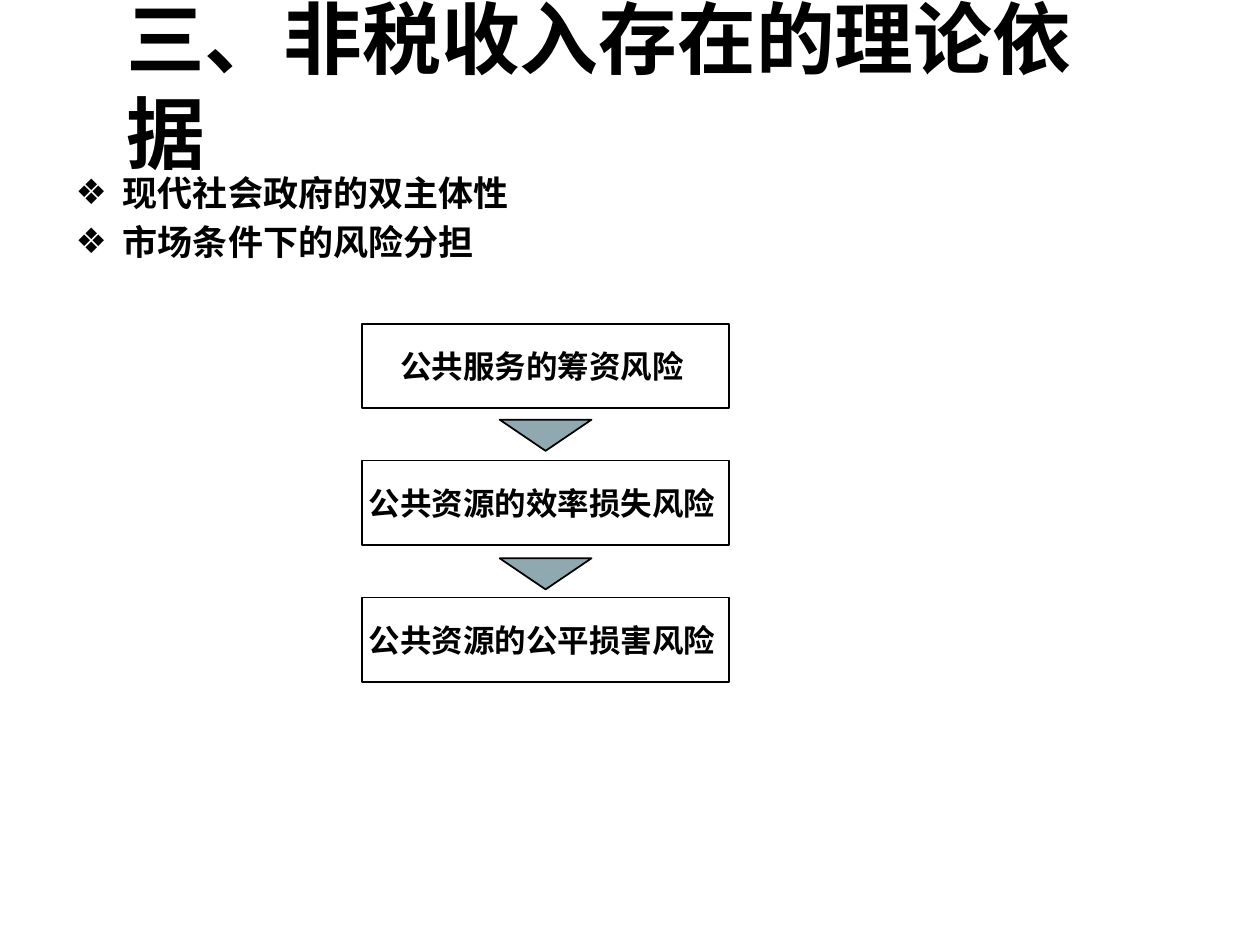
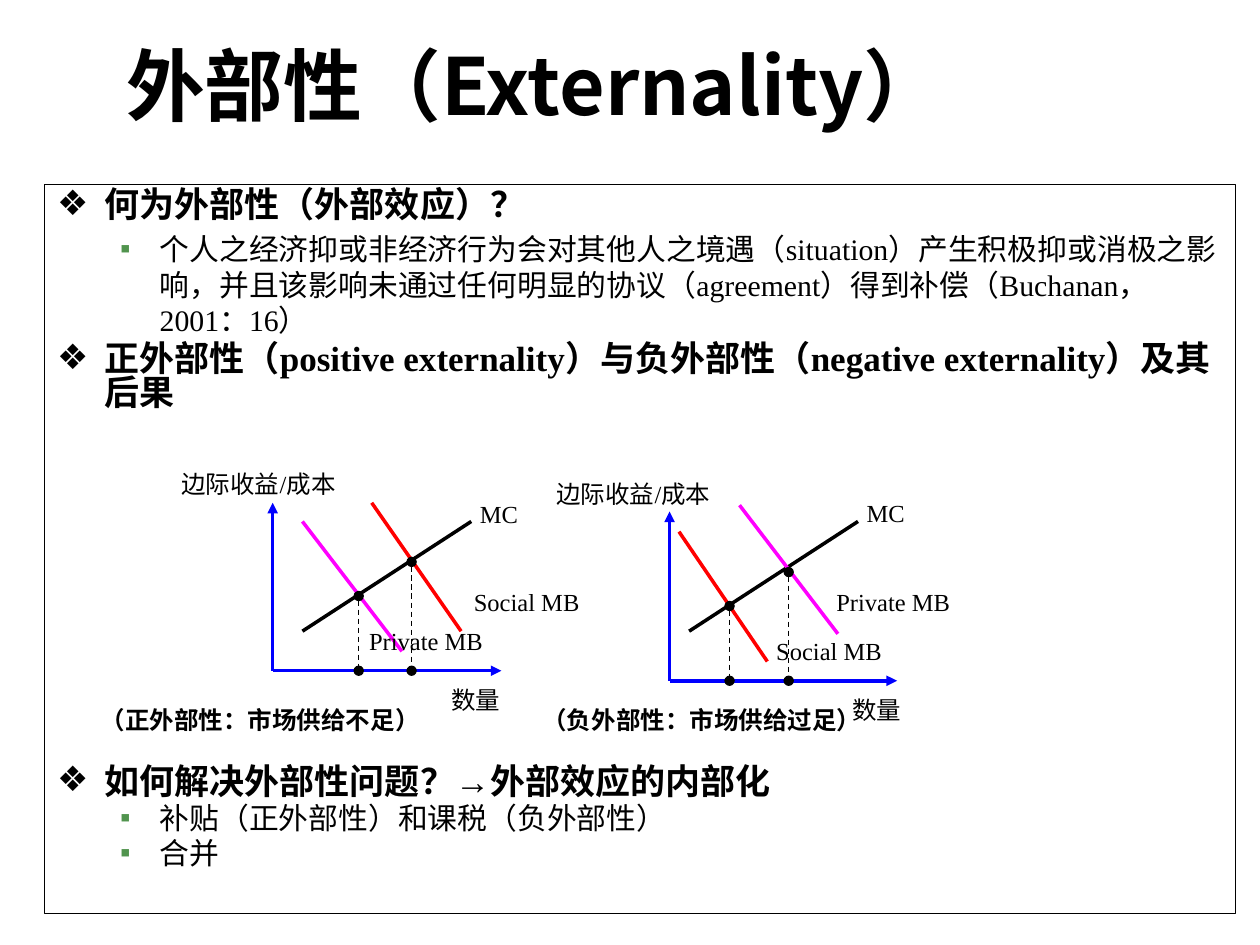
"""Build two slides on non-tax revenue theory and externality."""
from lxml import etree
from pptx import Presentation
from pptx.dml.color import RGBColor
from pptx.enum import dml, shapes, text
from pptx.oxml import ns
from pptx.util import Pt

COLORS = {
    "ink": "000000", "paper": "FFFFFF", "arrow": "90A8B0", "bullet": "51944E",
    "axis": "0000FF", "private": "FF00FF", "social": "FF0000",
}
SERIF = "Times New Roman"
SANS = "DejaVu Sans"
LABEL = "Arial"
EAST = {SERIF: LABEL, LABEL: LABEL}
LEVELS = [
    dict(char="❖", color="ink", left=27, hang=27, size=20, bold=True),
    dict(char="▪", color="bullet", left=58.5, hang=22.5, size=17, bold=False),
]
GRAPHS = [
    dict(
        origin=(155.8, 383.3), top=287.3, right=286.5,
        curves=[("private", 172.8, 298, 229.7, 372.2),
                ("social", 212.4, 287.3, 263.5, 360.7),
                ("ink", 172.8, 360.7, 269.3, 298)],
        crossings=[(205, 340.6), (235.2, 321.1)],
        labels=[("数量", 286, 400), ("边际收益/成本", 191.8, 276.4), ("MC", 296, 293.5),
                ("Social MB", 331.2, 344), ("Private MB", 276, 366)],
        caption=("（正外部性：市场供给不足）", 57.5),
    ),
    dict(
        origin=(382.6, 389), top=292.3, right=512.6,
        curves=[("ink", 393.8, 360.7, 490.3, 298),
                ("social", 388, 303.8, 438.5, 378),
                ("private", 422.6, 288.7, 478.8, 362.2)],
        crossings=[(416.9, 346.3), (450.7, 326.9)],
        labels=[("数量", 515, 405.5), ("边际收益/成本", 406, 282), ("MC", 517, 293),
                ("Private MB", 543, 344), ("Social MB", 504, 372)],
        caption=("（负外部性：市场供给过足）", 310),
    ),
]


def rgb(name):
    return RGBColor.from_string(COLORS[name])


def place(sp, x, y, w, h):
    sp.left, sp.top, sp.width, sp.height = Pt(x), Pt(y), Pt(w), Pt(h)


def add_run(p, words, size, font, bold=False):
    r = p.add_run()
    r.text = words
    r.font.name, r.font.size, r.font.bold = font, Pt(size), bold
    r.font.color.rgb = rgb("ink")
    ea = etree.SubElement(r.font._element, ns.qn("a:ea"))
    ea.set("typeface", EAST.get(font, SANS))


def set_title(s, words, font):
    sp = s.shapes.title
    place(sp, 64.8, 26, 570, 44.6)
    tf = sp.text_frame
    tf.auto_size, tf.word_wrap = text.MSO_AUTO_SIZE.NONE, True
    tf.vertical_anchor = text.MSO_ANCHOR.MIDDLE
    p = tf.paragraphs[0]
    p.alignment = text.PP_ALIGN.LEFT
    add_run(p, words, 45, font, bold=True)


def add_bullet(p, level):
    pPr = p._p.get_or_add_pPr()
    pPr.set("marL", str(Pt(level["left"])))
    pPr.set("indent", str(-Pt(level["hang"])))
    clr = etree.SubElement(pPr, ns.qn("a:buClr"))
    etree.SubElement(clr, ns.qn("a:srgbClr")).set("val", COLORS[level["color"]])
    etree.SubElement(pPr, ns.qn("a:buChar")).set("char", level["char"])


def fill_body(s, box, items, font):
    """Fill the body with (level, words, space before, line spacing) items."""
    sp = s.placeholders[1]
    place(sp, *box)
    tf = sp.text_frame
    tf.auto_size, tf.word_wrap = text.MSO_AUTO_SIZE.NONE, True
    for i, (depth, words, before, spacing) in enumerate(items):
        p = tf.add_paragraph() if i else tf.paragraphs[0]
        level = LEVELS[depth]
        p.level = depth
        add_bullet(p, level)
        p.alignment = text.PP_ALIGN.LEFT
        p.space_before, p.line_spacing = Pt(before), spacing
        add_run(p, words, level["size"], font, level["bold"])
    return sp


def outline(sp, fill, width):
    sp.fill.solid()
    sp.fill.fore_color.rgb = rgb(fill)
    sp.line.color.rgb = rgb("ink")
    sp.line.width = Pt(width)


def add_block(s, kind, box, fill):
    sp = s.shapes.add_shape(kind, *map(Pt, box))
    sp.shadow.inherit = False
    outline(sp, fill, 1)
    return sp


def write_centred(sp, words):
    tf = sp.text_frame
    tf.word_wrap = False
    tf.vertical_anchor = text.MSO_ANCHOR.MIDDLE
    tf.margin_right = Pt(10)
    tf.margin_left = Pt(6)
    p = tf.paragraphs[0]
    p.alignment = text.PP_ALIGN.CENTER
    add_run(p, words, 18, LABEL, bold=True)


def add_text(s, words, box, align, bold=False):
    tf = s.shapes.add_textbox(*map(Pt, box)).text_frame
    tf.word_wrap = True
    tf.margin_left = tf.margin_right = tf.margin_top = tf.margin_bottom = 0
    tf.vertical_anchor = text.MSO_ANCHOR.MIDDLE
    p = tf.paragraphs[0]
    p.alignment = align
    add_run(p, words, 14, SERIF, bold)


def add_line(s, x1, y1, x2, y2, color, width=2, dash=None, head=None, tail=None):
    cx = s.shapes.add_connector(shapes.MSO_CONNECTOR.STRAIGHT, *map(Pt, (x1, y1, x2, y2)))
    cx.line.color.rgb = rgb(color)
    cx.line.width = Pt(width)
    if dash:
        cx.line.dash_style = dash
    ln = cx.line._get_or_add_ln()
    for tag, end in (("a:headEnd", head), ("a:tailEnd", tail)):
        if end:
            etree.SubElement(ln, ns.qn(tag)).set("type", end)
    etree.SubElement(cx._element.spPr, ns.qn("a:effectLst"))


def add_graph(s, origin, top, right, curves, crossings, labels, caption):
    x0, y0 = origin
    add_line(s, x0, y0, x0, top, "axis", tail="triangle")
    add_line(s, x0, y0, right, y0, "axis", tail="triangle")
    for color, *ends in curves:
        add_line(s, *ends, color)
    for x, y in crossings:
        add_line(s, x, y, x, y0, "ink", 0.75, dml.MSO_LINE.DASH, "oval", "oval")
    for words, edge, middle in labels:
        add_text(s, words, (edge - 120, middle - 12, 120, 24), text.PP_ALIGN.RIGHT)
    words, x = caption
    add_text(s, words, (x, 399, 200, 24), text.PP_ALIGN.LEFT, bold=True)


def build_theory(prs):
    s = prs.slides.add_slide(prs.slide_layouts[1])
    set_title(s, "三、非税收入存在的理论依据", "Noto Sans CJK JP")
    fill_body(s, (36, 94.3, 648, 388), [
        (0, "现代社会政府的双主体性", 0, 1.0),
        (0, "市场条件下的风险分担", 4, 1.0),
    ], SANS)
    risks = ["公共服务的筹资风险", "公共资源的效率损失风险", "公共资源的公平损害风险"]
    for i, risk in enumerate(risks):
        box = (206.7, 185 + 78.2 * i, 209.8, 48.2)
        write_centred(add_block(s, shapes.MSO_SHAPE.RECTANGLE, box, "paper"), risk)
    for i in range(len(risks) - 1):
        box = (285.5, 239.8 + 79.2 * i, 52.5, 17.8)
        add_block(s, shapes.MSO_SHAPE.ISOSCELES_TRIANGLE, box, "arrow").rotation = 180


def build_externality(prs):
    s = prs.slides.add_slide(prs.slide_layouts[1])
    set_title(s, "外部性（Externality）", "Noto Sans CJK TC")
    body = fill_body(s, (25.5, 105.5, 680.4, 416.5), [
        (0, "何为外部性（外部效应）？", 0, 0.8),
        (1, "个人之经济抑或非经济行为会对其他人之境遇（situation）产生积极抑或消极之影响，"
            "并且该影响未通过任何明显的协议（agreement）得到补偿（Buchanan，2001：16）", 3.4, 1.0),
        (0, "正外部性（positive externality）与负外部性（negative externality）及其后果", 4, 0.8),
        (0, "如何解决外部性问题？→外部效应的内部化", 203, 0.8),
        (1, "补贴（正外部性）和课税（负外部性）", 3.4, 0.8),
        (1, "合并", 3.4, 0.8),
    ], SERIF)
    outline(body, "paper", 0.75)
    for graph in GRAPHS:
        add_graph(s, **graph)


def main():
    prs = Presentation()
    prs.slide_width, prs.slide_height = Pt(720), Pt(540)
    build_theory(prs)
    build_externality(prs)
    prs.save("out.pptx")


if __name__ == "__main__":
    main()
